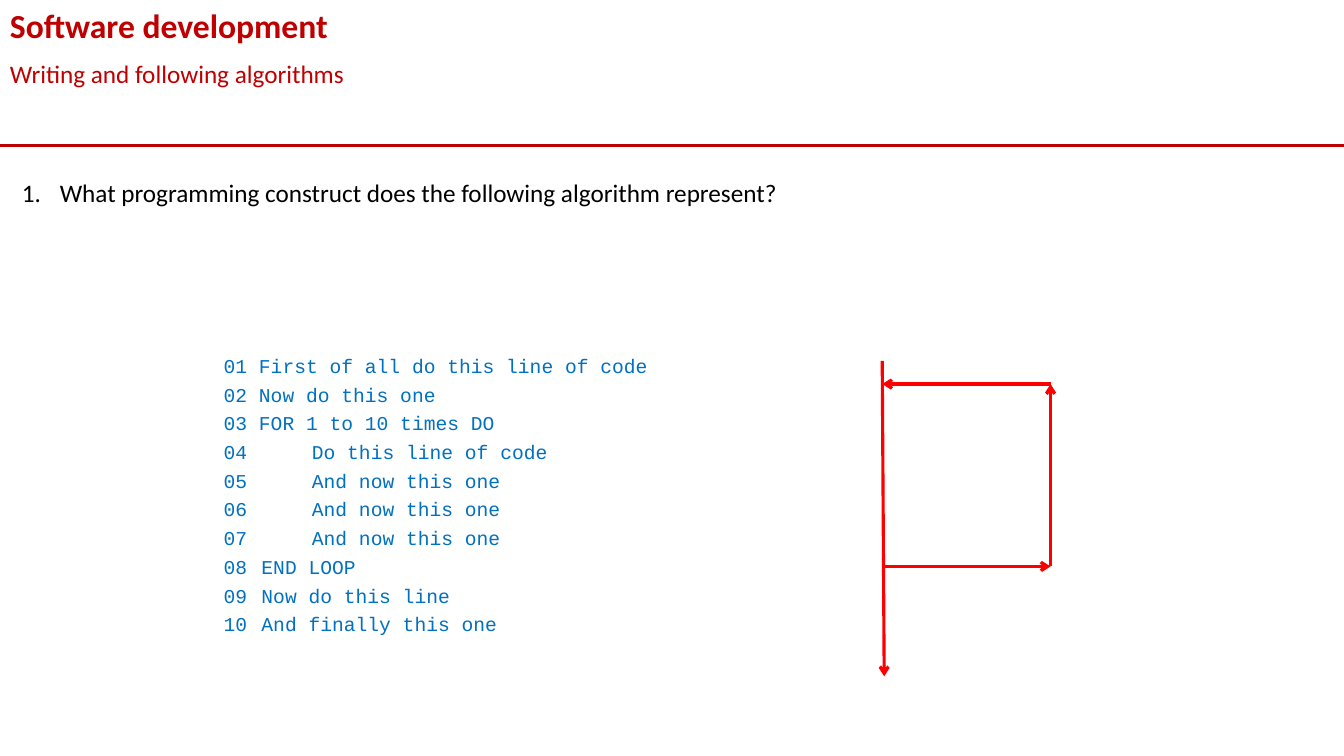
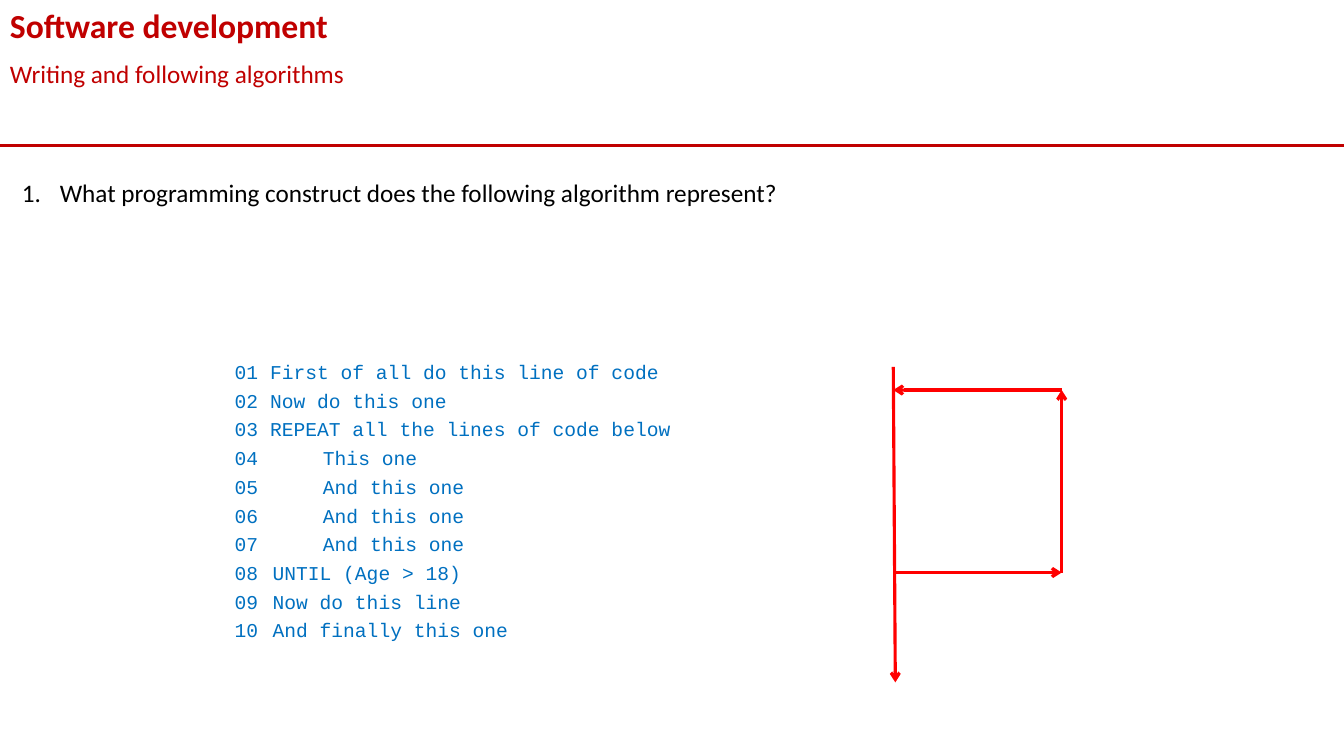
from lxml.etree import SubElement
from pptx import Presentation
from pptx.dml.color import RGBColor
from pptx.enum.shapes import MSO_CONNECTOR as Connector
from pptx.enum.text import MSO_AUTO_SIZE as AutoSize
from pptx.oxml.ns import qn
from pptx.util import Inches, Pt

COLORS = {"brand": "C00000", "text": "000000", "code": "0070C0", "flow": "FF0000"}
WIDTH, HEIGHT = 13.33, 7.5
HANGING = 0.375

TITLE = "Software development"
SUBTITLE = "Writing and following algorithms"
QUESTION = "What programming construct does the following algorithm represent?"

SLIDES = [
    {
        "code_at": (2.12, 3.46),
        "flow_at": (8.75, 3.58),
        "code": [
            "01 First of all do this line of code",
            "02 Now do this one",
            "03 FOR 1 to 10 times DO",
            "04\t\tDo this line of code",
            "05\t\tAnd now this one",
            "06\t\tAnd now this one",
            "07\t\tAnd now this one",
            "08\tEND LOOP",
            "09\tNow do this line",
            "10\tAnd finally this one",
        ],
    },
    {
        "code_at": (2.23, 3.52),
        "flow_at": (8.86, 3.64),
        "code": [
            "01 First of all do this line of code",
            "02 Now do this one",
            "03 REPEAT all the lines of code below",
            "04\t\tThis one",
            "05\t\tAnd this one",
            "06\t\tAnd this one",
            "07\t\tAnd this one",
            "08\tUNTIL (Age > 18)",
            "09\tNow do this line",
            "10\tAnd finally this one",
        ],
    },
]

# Loop diagram, measured from the top of its main line
LOOP_TOP, LOOP_BOTTOM, LOOP_RIGHT = 0.23, 2.04, 1.67
FLOW_ARROWS = [
    ((0, 0), (0.02, 3.13)),
    ((0, LOOP_BOTTOM), (LOOP_RIGHT, LOOP_BOTTOM)),
    ((LOOP_RIGHT, LOOP_BOTTOM), (LOOP_RIGHT, LOOP_TOP)),
    ((LOOP_RIGHT, LOOP_TOP), (0, LOOP_TOP)),
]


def add_text(page, lines, at, size, color, font="Calibri", bold=False,
             hanging=False, numbered=False, gap=0):
    """Add a text box with one paragraph per line and gap points between them."""
    box = page.shapes.add_textbox(*map(Inches, at))
    frame = box.text_frame
    frame.word_wrap = True
    frame.text = "\n".join(lines)
    frame.auto_size = AutoSize.SHAPE_TO_FIT_TEXT
    for index, para in enumerate(frame.paragraphs):
        if index:
            para.space_before = Pt(gap)
        properties = para._p.get_or_add_pPr()
        if hanging:
            properties.set("marL", str(Inches(HANGING)))
            properties.set("indent", str(-Inches(HANGING)))
        if numbered:
            SubElement(properties, qn("a:buAutoNum"), type="arabicPeriod")
        for span in para.runs:
            span.font.name = font
            span.font.size = Pt(size)
            span.font.bold = bold
            span.font.color.rgb = RGBColor.from_string(COLORS[color])


def add_line(shapes, start, end, color, arrow=False):
    line = shapes.add_connector(Connector.STRAIGHT, *map(Inches, (*start, *end)))
    line.line.width = Pt(2.25)
    line.line.color.rgb = RGBColor.from_string(COLORS[color])
    if arrow:
        SubElement(line.line._get_or_add_ln(), qn("a:tailEnd"), type="arrow")
    SubElement(line._element.spPr, qn("a:effectLst"))


def add_frame(page):
    """Add the rule, headings and question that every slide shares."""
    add_line(page.shapes, (0, 1.44), (WIDTH, 1.44), "brand")
    add_text(page, [TITLE], (0, 0, WIDTH, 0.5), 24, "brand", bold=True)
    add_text(page, [SUBTITLE], (0, 0.53, WIDTH, 0.4), 18, "brand")
    add_text(page, [QUESTION], (0.12, 1.71, 13.07, 0.4), 18, "text",
             hanging=True, numbered=True)


def add_flow(page, origin):
    left, top = origin
    group = page.shapes.add_group_shape()
    for start, end in FLOW_ARROWS:
        start, end = ((left + x, top + y) for x, y in (start, end))
        add_line(group.shapes, start, end, "flow", arrow=True)


def main():
    deck = Presentation()
    deck.slide_width, deck.slide_height = Inches(WIDTH), Inches(HEIGHT)
    for content in SLIDES:
        page = deck.slides.add_slide(deck.slide_layouts[6])
        add_frame(page)
        add_text(page, content["code"], (*content["code_at"], 6, 2.8), 14, "code",
                 font="Courier New", hanging=True, gap=3.7)
        add_flow(page, content["flow_at"])
    deck.save("out.pptx")


if __name__ == "__main__":
    main()
